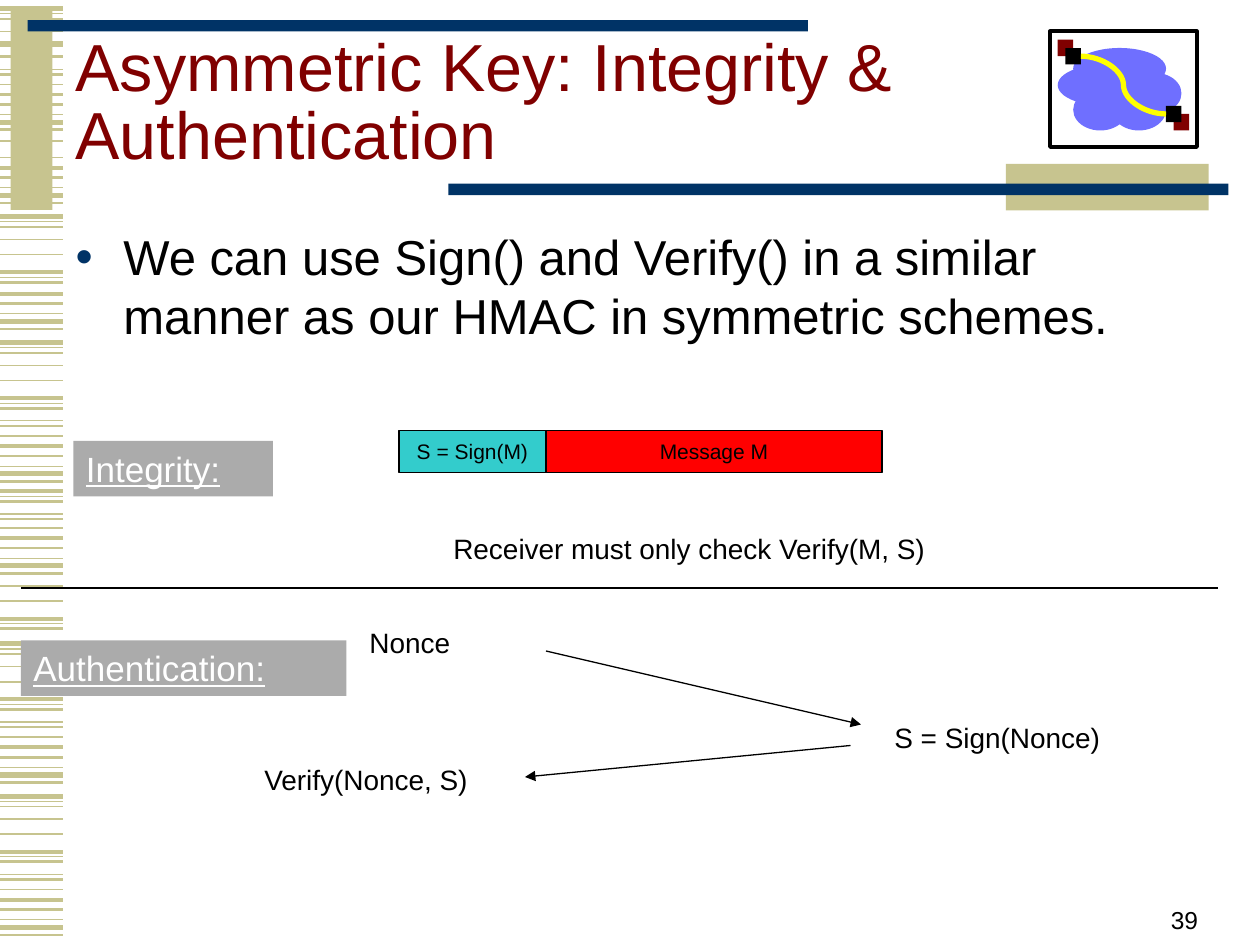
from dataclasses import dataclass
from typing import NamedTuple

from pptx import Presentation
from pptx.dml.color import RGBColor
from pptx.enum.shapes import MSO_CONNECTOR, MSO_SHAPE
from pptx.enum.text import MSO_ANCHOR, MSO_AUTO_SIZE, PP_ALIGN
from pptx.oxml.ns import qn
from pptx.util import Inches, Pt

FONT = "Arial"
BLACK, WHITE, SAND, NAVY, MAROON = "000000", "FFFFFF", "C7C48F", "003366", "800000"
CLOUD, YELLOW, GREY, TEAL, RED = "6F6FFF", "FFFF00", "ABABAB", "33CCCC", "FF0000"


class Area(NamedTuple):
    column: float
    row: float
    columns: float
    rows: float


@dataclass(frozen=True)
class Grid:
    """A grid of equal cells, with its corner and cell size in inches."""
    left: float
    top: float
    cell_width: float
    cell_height: float

    def point(self, column: float, row: float) -> tuple:
        return (Inches(self.left + column * self.cell_width),
                Inches(self.top + row * self.cell_height))

    def frame(self, area: Area) -> tuple:
        size = Inches(area.columns * self.cell_width), Inches(area.rows * self.cell_height)
        return self.point(area.column, area.row) + size


PAGE = Grid(0, 0, 10 / 120, 7.5 / 90)
STRIPES = Grid(0, 0, 0.5, 0.01)
EMBLEM_AREA = Area(100, 3, 14, 11)
EMBLEM = Grid(100 / 12, 3 / 12, 14 / 12 / 19, 11 / 12 / 14)


class Stripe(NamedTuple):
    offset: int
    weight: float


SHORT_BAND = [Stripe(0, 1), Stripe(8, 2.25), Stripe(16, 1.5), Stripe(24, 0.75),
              Stripe(30, 3), Stripe(36, 1.5)]
LONG_BAND = [Stripe(0, 3), Stripe(4, 0.75), Stripe(8, 1), Stripe(18, 1), Stripe(30, 1),
             Stripe(44, 2.25), Stripe(48, 0.75), Stripe(52, 1.5), Stripe(62, 0.75),
             Stripe(66, 1.5)]


class Band(NamedTuple):
    origin: int
    stripes: list


BANDS = [
    Band(-7, LONG_BAND[7:]), Band(7, LONG_BAND[:4]), Band(35, LONG_BAND[:1]),
    Band(67, SHORT_BAND), Band(82, LONG_BAND[4:5]), Band(125, SHORT_BAND),
    Band(172, LONG_BAND[:8]), Band(225, SHORT_BAND[1:]), Band(272, LONG_BAND),
    Band(346, SHORT_BAND), Band(346, LONG_BAND[5:]), Band(419, SHORT_BAND),
    Band(447, LONG_BAND[3:8]), Band(511, LONG_BAND), Band(585, SHORT_BAND),
    Band(632, LONG_BAND), Band(706, SHORT_BAND),
]


@dataclass(frozen=True)
class Label:
    text: str
    area: Area
    size: float = 16
    color: str = BLACK
    underline: bool = False
    align: PP_ALIGN = PP_ALIGN.LEFT
    anchor: MSO_ANCHOR = MSO_ANCHOR.TOP
    wrap: bool = True
    fill: str = ""
    line: str = ""


TITLE = Label("Asymmetric Key: Integrity & Authentication", Area(6, 2, 94, 16),
              size=38, color=MAROON, anchor=MSO_ANCHOR.MIDDLE)
BODY = Label("We can use Sign() and Verify() in a similar manner as our HMAC "
             "in symmetric schemes.", Area(6, 21, 108, 14), size=28)
HEADING = dict(size=20, color=WHITE, underline=True, fill=GREY)
FIELD = dict(size=12, align=PP_ALIGN.CENTER, anchor=MSO_ANCHOR.MIDDLE, wrap=False, line=BLACK)
LABELS = [
    Label("Integrity:", Area(7, 42, 19, 5.28), **HEADING),
    Label("S = Sign(M)", Area(38, 41, 14, 4), fill=TEAL, **FIELD),
    Label("Message M", Area(52, 41, 32, 4), fill=RED, **FIELD),
    Label("Receiver must only check Verify(M, S)", Area(42, 50, 55, 4.44)),
    Label("Authentication:", Area(2, 61, 31, 5.28), **HEADING),
    Label("Nonce", Area(34, 59, 15, 4.44)),
    Label("S = Sign(Nonce)", Area(84, 68, 28, 4.44)),
    Label("Verify(Nonce, S)", Area(24, 72, 25, 4.44)),
    Label("39", Area(86.5, 83.6, 28.8, 6), size=14, align=PP_ALIGN.RIGHT,
          anchor=MSO_ANCHOR.BOTTOM),
]


def rgb(color: str) -> RGBColor:
    return RGBColor.from_string(color)


def add_block(page, grid: Grid, area: Area, fill: str, line: str = "",
              weight: float = 0.75, kind=MSO_SHAPE.RECTANGLE):
    block = page.shapes.add_shape(kind, *grid.frame(area))
    block.shadow.inherit = False
    block.fill.solid()
    block.fill.fore_color.rgb = rgb(fill)
    if line:
        block.line.color.rgb = rgb(line)
        block.line.width = Pt(weight)
    else:
        block.line.fill.background()
    return block


def add_line(page, grid: Grid, start: tuple, end: tuple, color: str = BLACK,
             weight: float = 0.75, arrow: bool = False, kind=MSO_CONNECTOR.STRAIGHT):
    line = page.shapes.add_connector(kind, *grid.point(*start), *grid.point(*end))
    line.line.color.rgb = rgb(color)
    line.line.width = Pt(weight)
    properties = line._element.spPr
    if arrow:
        outline = properties.find(qn("a:ln"))
        outline.append(outline.makeelement(qn("a:tailEnd"), {"type": "triangle"}))
    properties.append(properties.makeelement(qn("a:effectLst"), {}))
    return line


def write(box, label: Label):
    frame = box.text_frame
    frame.auto_size = MSO_AUTO_SIZE.NONE
    frame.word_wrap = label.wrap
    frame.vertical_anchor = label.anchor
    para = frame.paragraphs[0]
    para.alignment = label.align
    para.space_before = Pt(0)
    span = para.add_run()
    span.text = label.text
    span.font.name = FONT
    span.font.size = Pt(label.size)
    span.font.color.rgb = rgb(label.color)
    if label.underline:
        span.font.underline = True
    return para


def add_label(page, label: Label) -> None:
    if label.fill:
        box = add_block(page, PAGE, label.area, label.fill, label.line)
    else:
        box = page.shapes.add_textbox(*PAGE.frame(label.area))
    write(box, label)


def fill_placeholder(box, label: Label):
    box.left, box.top, box.width, box.height = PAGE.frame(label.area)
    return write(box, label)


def set_bullet(para, character: str, color: str, indent: float) -> None:
    properties = para._p.get_or_add_pPr()
    properties.set("marL", str(Inches(indent)))
    properties.set("indent", str(-Inches(indent)))
    tint = properties.makeelement(qn("a:buClr"), {})
    tint.append(tint.makeelement(qn("a:srgbClr"), {"val": color}))
    properties.append(tint)
    properties.append(properties.makeelement(qn("a:buFont"), {"typeface": FONT}))
    properties.append(properties.makeelement(qn("a:buChar"), {"char": character}))


def add_emblem(page) -> None:
    add_block(page, PAGE, EMBLEM_AREA, WHITE, BLACK, 2.25)
    add_block(page, EMBLEM, Area(16, 10, 2, 2), MAROON)
    for puff in [Area(1, 4, 12, 5), Area(3, 2, 12, 5), Area(3, 7, 7, 5),
                 Area(8, 7, 7, 5), Area(8, 5, 7, 5), Area(10, 5, 7, 5)]:
        add_block(page, EMBLEM, puff, CLOUD, kind=MSO_SHAPE.OVAL)
    add_block(page, EMBLEM, Area(1, 1, 2, 2), MAROON)
    sender = add_block(page, EMBLEM, Area(2, 2, 2, 2), BLACK)
    receiver = add_block(page, EMBLEM, Area(15, 9, 2, 2), BLACK)
    cable = add_line(page, EMBLEM, (4, 3), (15, 10), YELLOW, 3, kind=MSO_CONNECTOR.CURVE)
    cable.begin_connect(sender, 3)
    cable.end_connect(receiver, 1)


def add_decoration(page) -> None:
    for band in BANDS:
        for stripe in band.stripes:
            row = band.origin + stripe.offset
            add_line(page, STRIPES, (0, row), (1, row), SAND, stripe.weight)
    add_block(page, PAGE, Area(1, 1, 4, 19), SAND)
    add_block(page, PAGE, Area(2.64, 1.92, 74.3, 1.08), NAVY)
    add_block(page, PAGE, Area(95.8, 15.6, 19.3, 4.44), SAND)
    add_block(page, PAGE, Area(42.7, 17.5, 74.3, 1.08), NAVY)
    add_emblem(page)


def main() -> None:
    deck = Presentation()
    deck.slide_width, deck.slide_height = Inches(10), Inches(7.5)
    page = deck.slides.add_slide(deck.slide_layouts[1])
    add_decoration(page)

    # Title and list
    fill_placeholder(page.shapes.title, TITLE).line_spacing = 0.85
    set_bullet(fill_placeholder(page.placeholders[1], BODY), "•", NAVY, 0.38)

    # Integrity and authentication schemes, with the rule between them
    for label in LABELS:
        add_label(page, label)
    add_line(page, PAGE, (52, 62), (82, 69), arrow=True)
    add_line(page, PAGE, (81, 71), (50, 74), arrow=True)
    add_line(page, PAGE, (2, 56), (116, 56))
    deck.save("out.pptx")


if __name__ == "__main__":
    main()
